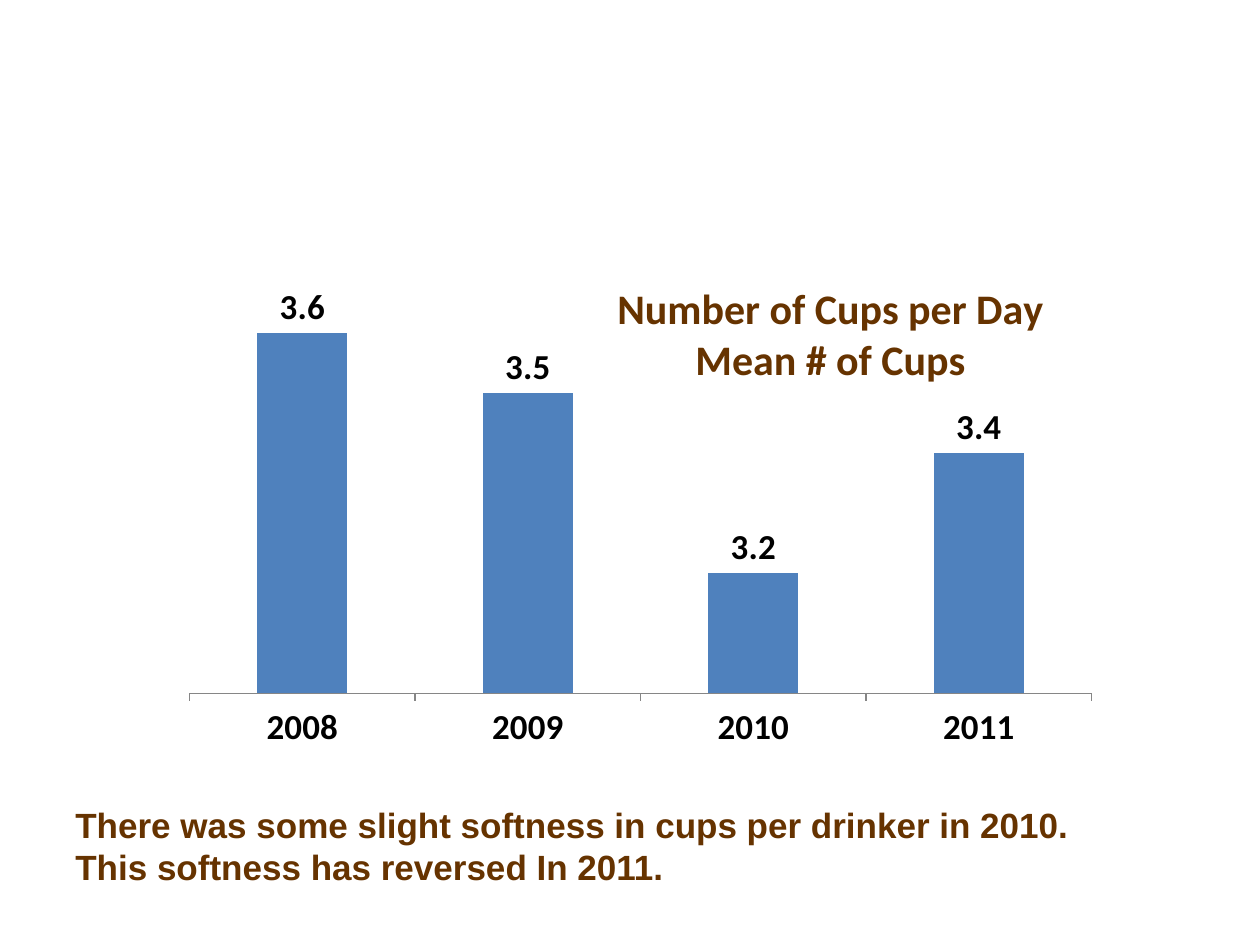
from pptx import Presentation
from pptx.chart.data import CategoryChartData
from pptx.dml.color import RGBColor as RGB
from pptx.enum.chart import XL_CHART_TYPE as ChartType
from pptx.enum.chart import XL_LABEL_POSITION as LabelPosition
from pptx.enum.chart import XL_TICK_MARK as TickMark
from pptx.enum.text import MSO_AUTO_SIZE as AutoSize
from pptx.oxml.ns import qn
from pptx.util import Cm, Pt
from lxml.etree import SubElement

YEARS = ["2008", "2009", "2010", "2011"]
MEAN_CUPS = [3.6, 3.5, 3.2, 3.4]
TITLE = ["Number of Cups per Day", "Mean # of Cups"]
COMMENTS = [
    "There was some slight softness in cups per drinker in 2010.",
    "This softness has reversed In 2011.",
]

THEME = {
    "bar": RGB(0x4F, 0x81, 0xBD),
    "axis": RGB(0x86, 0x86, 0x86),
    "base": {"name": "Calibri", "size": Pt(10), "color": RGB(0, 0, 0)},
    "figures": {"name": "Calibri", "size": Pt(20), "bold": True, "color": RGB(0, 0, 0)},
    "title": {"name": "Calibri", "size": Pt(24), "bold": True, "color": RGB(0x66, 0x33, 0)},
    "comment": {"name": "Arial", "size": Pt(20), "bold": True, "color": RGB(0x66, 0x33, 0)},
}

CHART_BOX = [Cm(n) for n in (3.81, 5.51, 18.21, 11.35)]
COMMENT_BOX = [Cm(n) for n in (1.27, 16.08, 23.29, 1.96)]


def style_font(font, style):
    for attribute, setting in style.items():
        if attribute == "color":
            font.color.rgb = setting
        else:
            setattr(font, attribute, setting)


def write_lines(frame, lines, style):
    for index, line in enumerate(lines):
        paragraph = frame.add_paragraph() if index else frame.paragraphs[0]
        run = paragraph.add_run()
        run.text = line
        style_font(run.font, style)


def place(part, settings):
    """Give a chart part a manual layout, as fractions of the chart."""
    layout = part.find(qn("c:layout"))
    if layout is None:
        layout = part.makeelement(qn("c:layout"))
        part.insert(0, layout)
    for child in list(layout):
        layout.remove(child)
    manual = SubElement(layout, qn("c:manualLayout"))
    for tag, setting in settings.items():
        SubElement(manual, qn(f"c:{tag}")).set("val", str(setting))


def add_cups_chart(slide):
    cups = CategoryChartData(number_format="0.0")
    cups.categories = YEARS
    cups.add_series("Series 1", MEAN_CUPS)
    chart = slide.shapes.add_chart(ChartType.COLUMN_CLUSTERED, *CHART_BOX, cups).chart
    chart.has_legend = False
    style_font(chart.font, THEME["base"])

    chart.has_title = True
    title = chart.chart_title
    write_lines(title.text_frame, TITLE, THEME["title"])
    place(title._element, {"xMode": "edge", "yMode": "edge", "x": 0.47, "y": 0.01})
    place(chart._chartSpace.chart.plotArea, {
        "layoutTarget": "inner", "xMode": "edge", "yMode": "edge",
        "x": 0, "y": 0, "w": 1, "h": 0.746,
    })

    year_axis = chart.category_axis
    year_axis.major_tick_mark = TickMark.OUTSIDE
    year_axis.format.line.color.rgb = THEME["axis"]
    style_font(year_axis.tick_labels.font, THEME["figures"])

    cups_axis = chart.value_axis
    for attribute, setting in {
        "visible": False, "has_major_gridlines": False,
        "minimum_scale": 3, "maximum_scale": 3.7,
    }.items():
        setattr(cups_axis, attribute, setting)

    plot = chart.plots[0]
    plot.gap_width = 150
    plot.vary_by_categories = False
    bars = plot.series[0]
    bars.format.fill.solid()
    bars.format.fill.fore_color.rgb = THEME["bar"]
    labels = bars.data_labels
    for attribute, setting in {
        "show_value": True, "position": LabelPosition.OUTSIDE_END,
        "number_format": "0.0", "number_format_is_linked": False,
    }.items():
        setattr(labels, attribute, setting)
    style_font(labels.font, THEME["figures"])


def add_comments(slide):
    frame = slide.shapes.add_textbox(*COMMENT_BOX).text_frame
    frame.word_wrap = True
    frame.auto_size = AutoSize.SHAPE_TO_FIT_TEXT
    write_lines(frame, COMMENTS, THEME["comment"])


def main():
    deck = Presentation()
    deck.slide_width, deck.slide_height = Cm(25.4), Cm(19.05)
    slide = deck.slides.add_slide(deck.slide_layouts[6])
    add_cups_chart(slide)
    add_comments(slide)
    deck.save("out.pptx")


if __name__ == "__main__":
    main()
